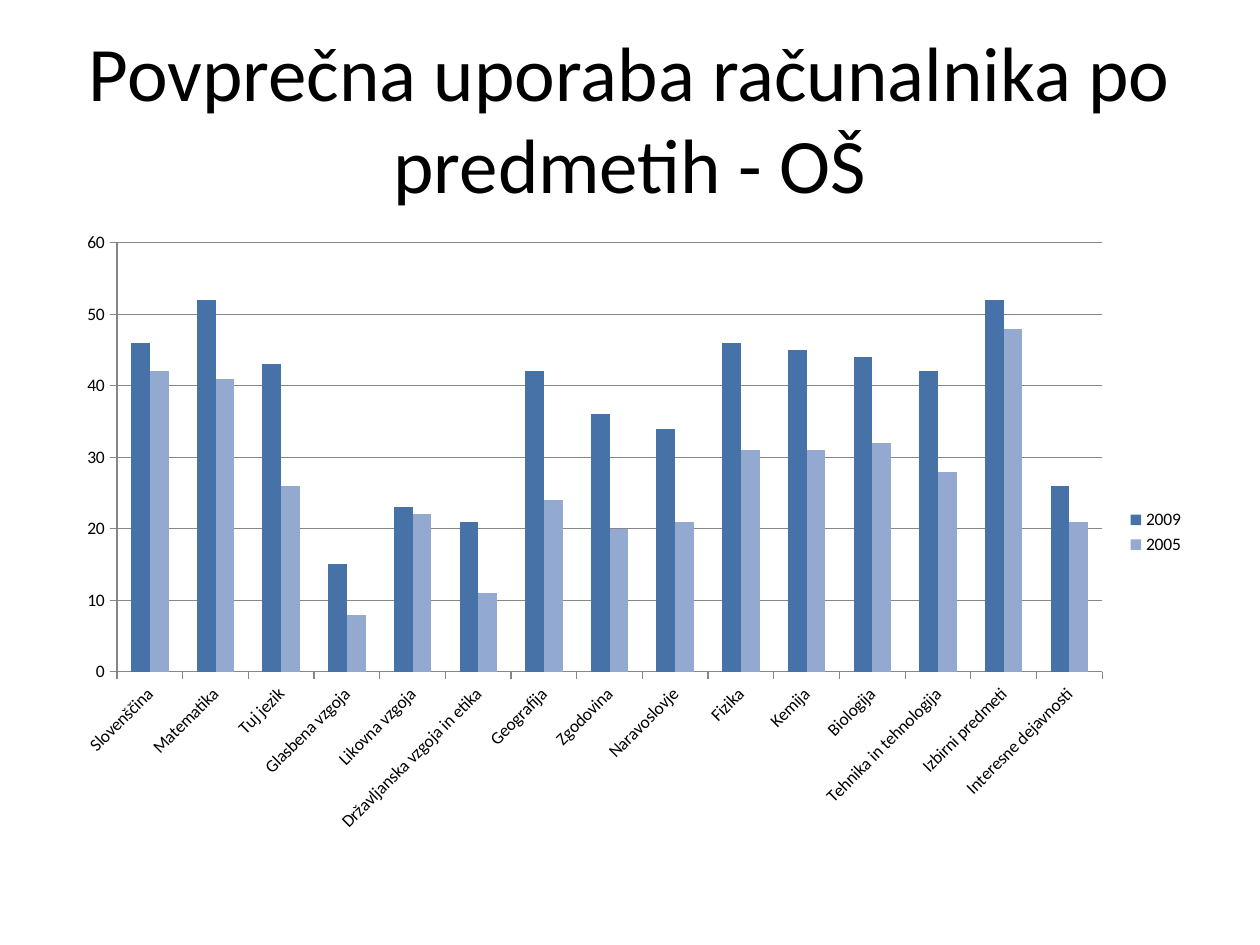
from dataclasses import dataclass

from pptx import Presentation
from pptx.chart.data import CategoryChartData
from pptx.dml.color import RGBColor
from pptx.enum.chart import XL_CHART_TYPE, XL_LEGEND_POSITION, XL_TICK_MARK
from pptx.enum.text import MSO_ANCHOR, PP_ALIGN
from pptx.util import Pt


@dataclass(frozen=True)
class Theme:
    font: str = "Calibri"
    title_size: int = 44
    chart_size: int = 10
    text: RGBColor = RGBColor(0, 0, 0)
    line: RGBColor = RGBColor(0x86, 0x86, 0x86)
    series: tuple = (RGBColor(0x46, 0x72, 0xA8), RGBColor(0x93, 0xA9, 0xCF))


def style_font(font, size):
    font.name = theme.font
    font.size = Pt(size)
    font.color.rgb = theme.text


theme = Theme()
prs = Presentation()
prs.slide_width, prs.slide_height = Pt(720), Pt(540)
s = prs.slides.add_slide(prs.slide_layouts[6])
left, width = Pt(36), Pt(648)

# Title
sp = s.shapes.add_textbox(left, Pt(21.6), width, Pt(90))
tf = sp.text_frame
tf.word_wrap = True
tf.vertical_anchor = MSO_ANCHOR.MIDDLE
tf.text = "Povprečna uporaba računalnika po predmetih - OŠ"
p = tf.paragraphs[0]
p.alignment = PP_ALIGN.CENTER
style_font(p.runs[0].font, theme.title_size)

# Average computer use by subject: 2009, 2005
use_by_subject = {
    "Slovenščina": (46, 42),
    "Matematika": (52, 41),
    "Tuj jezik": (43, 26),
    "Glasbena vzgoja": (15, 8),
    "Likovna vzgoja": (23, 22),
    "Državljanska vzgoja in etika": (21, 11),
    "Geografija": (42, 24),
    "Zgodovina": (36, 20),
    "Naravoslovje": (34, 21),
    "Fizika": (46, 31),
    "Kemija": (45, 31),
    "Biologija": (44, 32),
    "Tehnika in tehnologija": (42, 28),
    "Izbirni predmeti": (52, 48),
    "Interesne dejavnosti": (26, 21),
}
data = CategoryChartData()
data.categories = list(use_by_subject)
for year, values in zip(("2009", "2005"), zip(*use_by_subject.values())):
    data.add_series(year, values)

# Column chart
chart = s.shapes.add_chart(XL_CHART_TYPE.COLUMN_CLUSTERED, left, Pt(126),
                           width, Pt(356.4), data).chart
style_font(chart.font, theme.chart_size)
chart.has_title = False
chart.has_legend = True
chart.legend.position = XL_LEGEND_POSITION.RIGHT
chart.legend.include_in_layout = False

plot = chart.plots[0]
plot.gap_width = 150
plot.overlap = 0
plot.vary_by_categories = False
for series, color in zip(plot.series, theme.series):
    series.format.fill.solid()
    series.format.fill.fore_color.rgb = color

# Axes and gridlines
val_axis, cat_axis = chart.value_axis, chart.category_axis
val_axis.minimum_scale, val_axis.maximum_scale = 0, 60
val_axis.major_unit = 10
val_axis.has_major_gridlines = True
for part in (val_axis, cat_axis, val_axis.major_gridlines):
    part.format.line.color.rgb = theme.line
    part.format.line.width = Pt(0.75)
for axis in (val_axis, cat_axis):
    axis.major_tick_mark = XL_TICK_MARK.OUTSIDE
    style_font(axis.tick_labels.font, theme.chart_size)

# Subject labels slant upwards at 45 degrees
cat_axis._element.txPr.bodyPr.set("rot", "-2700000")

prs.save("out.pptx")
